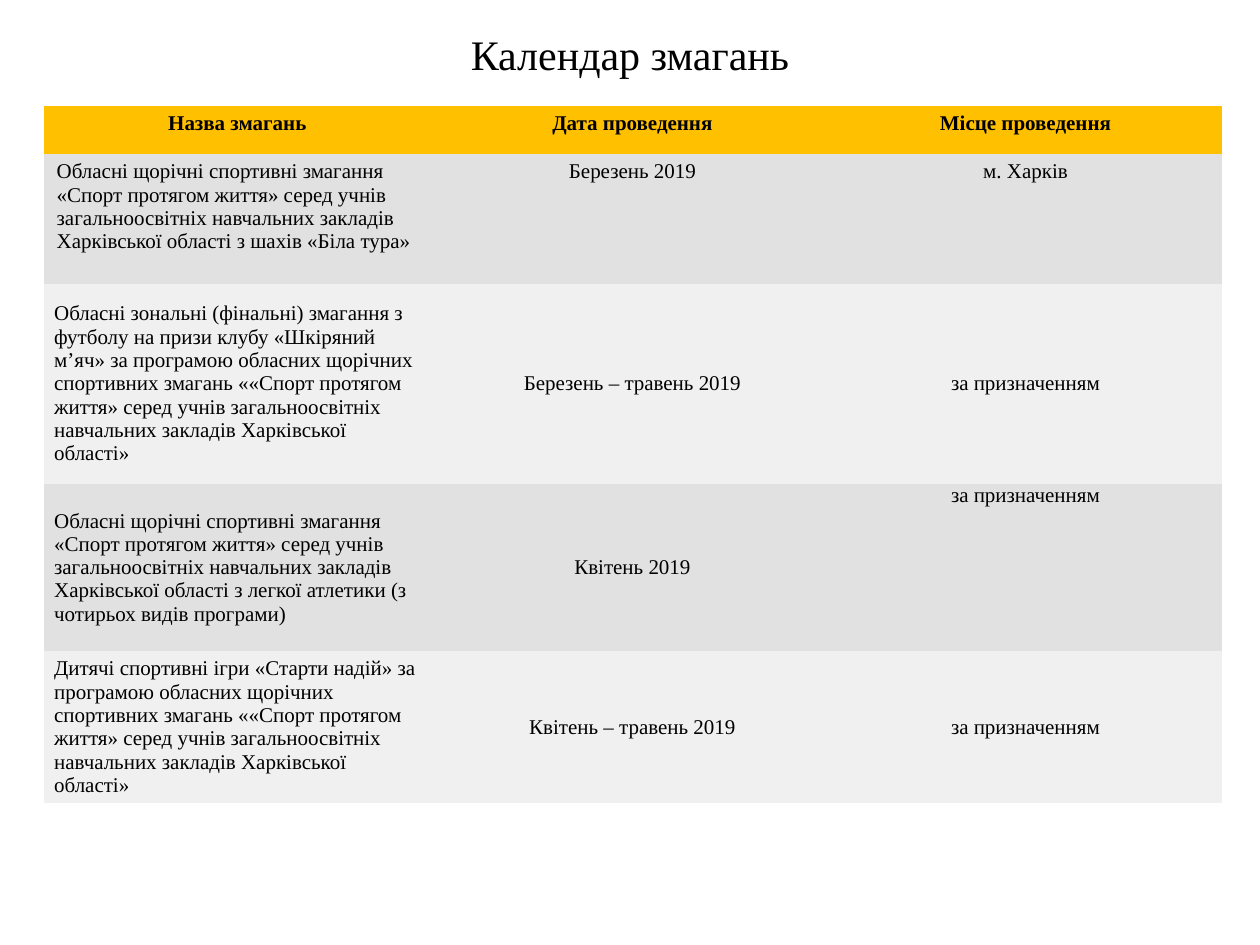
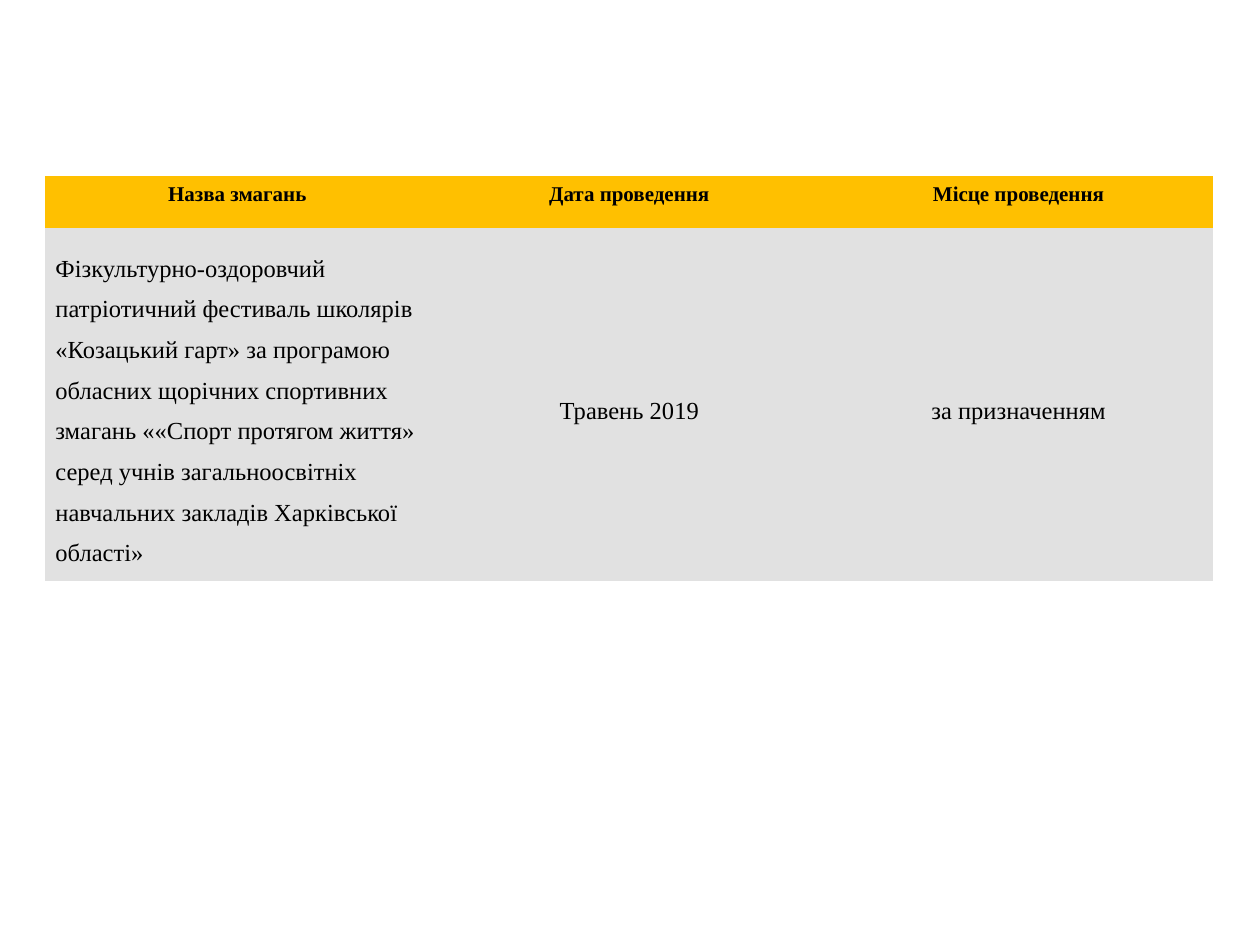
import pptx
import pptx.dml.color
import pptx.enum.text
import pptx.util

Inches = pptx.util.Inches
Pt = pptx.util.Pt
RGBColor = pptx.dml.color.RGBColor
ALIGN = pptx.enum.text.PP_ALIGN
ANCHOR = pptx.enum.text.MSO_ANCHOR

FONT = "Times New Roman"
BLACK = RGBColor(0x00, 0x00, 0x00)
GOLD = RGBColor(0xFF, 0xC0, 0x00)
GREY = RGBColor(0xE1, 0xE1, 0xE1)
LIGHT = RGBColor(0xF0, 0xF0, 0xF0)
PLAIN_STYLE = "{2D5ABB26-0587-4C30-8999-92F81FD0307C}"

HEADER = ("Назва змагань ", "Дата проведення", "Місце проведення")
SPRING_EVENTS = [
    ("Обласні щорічні спортивні змагання «Спорт протягом життя» серед учнів "
     "загальноосвітніх навчальних закладів Харківської області з шахів «Біла тура»",
     "Березень 2019", "м. Харків"),
    ("Обласні зональні (фінальні) змагання з футболу на призи клубу «Шкіряний м’яч» "
     "за програмою обласних щорічних спортивних змагань ««Спорт протягом життя» "
     "серед учнів загальноосвітніх навчальних закладів Харківської області»",
     "Березень – травень 2019", "за призначенням"),
    ("Обласні щорічні спортивні змагання «Спорт протягом життя» серед учнів "
     "загальноосвітніх навчальних закладів Харківської області з легкої атлетики "
     "(з чотирьох видів програми)",
     "Квітень 2019", "за призначенням"),
    ("Дитячі спортивні ігри «Старти надій» за програмою обласних щорічних спортивних "
     "змагань ««Спорт протягом життя» серед учнів загальноосвітніх навчальних "
     "закладів Харківської області»",
     "Квітень – травень 2019", "за призначенням"),
]
MAY_EVENTS = [
    ("Фізкультурно-оздоровчий патріотичний фестиваль школярів «Козацький гарт» "
     "за програмою обласних щорічних спортивних змагань ««Спорт протягом життя» "
     "серед учнів загальноосвітніх навчальних закладів Харківської області»",
     "Травень 2019", "за призначенням"),
]


def format_text(p, size, align, bold=False, spacing=None):
    p.alignment = align
    p.line_spacing = spacing
    for r in p.runs:
        r.font.name = FONT
        r.font.size = Pt(size)
        r.font.bold = bold
        r.font.color.rgb = BLACK


def add_calendar(slide, left, top, widths, heights, events, size, spacing, top_rows):
    """Add an events table; top_rows keep the default margins and top anchor."""
    rows = [HEADER] + events
    frame = slide.shapes.add_table(len(rows), len(HEADER), Inches(left), Inches(top),
                                   Inches(sum(widths)), Inches(sum(heights)))
    table = frame.table
    table._tbl.tblPr.find(pptx.oxml.ns.qn("a:tableStyleId")).text = PLAIN_STYLE
    for column, width in zip(table.columns, widths):
        column.width = Inches(width)
    for i, (texts, height) in enumerate(zip(rows, heights)):
        table.rows[i].height = Inches(height)
        header = i == 0
        for j, text in enumerate(texts):
            cell = table.cell(i, j)
            cell.text = text
            cell.fill.solid()
            cell.fill.fore_color.rgb = GOLD if header else (GREY if i % 2 else LIGHT)
            if i >= top_rows:
                cell.vertical_anchor = ANCHOR.MIDDLE
                cell.margin_left = cell.margin_right = Inches(0.08)
                cell.margin_top = cell.margin_bottom = 0
            format_text(cell.text_frame.paragraphs[0], 12 if header else size,
                        ALIGN.CENTER if header or j else ALIGN.LEFT,
                        header, None if header else spacing)
    return frame


prs = pptx.Presentation()
prs.slide_width = Inches(10)
prs.slide_height = Inches(7.5)
blank = prs.slide_layouts[6]

# Slide 1: title and spring calendar
s = prs.slides.add_slide(blank)
title = s.shapes.add_textbox(Inches(0.69), Inches(0.17), Inches(8.62), Inches(0.57))
tf = title.text_frame
tf.word_wrap = True
tf.vertical_anchor = ANCHOR.MIDDLE
tf.text = "Календар змагань"
format_text(tf.paragraphs[0], 24, ALIGN.CENTER, spacing=0.9)
calendar = add_calendar(s, 0.35, 0.84, (3.11, 3.12, 3.12), (0.38, 1.03, 1.59, 1.33, 1.14),
                        SPRING_EVENTS, 12, None, 2)
calendar.table.cell(3, 2).vertical_anchor = ANCHOR.TOP

# Slide 2: calendar continued, its event row grows to fit the text
s = prs.slides.add_slide(blank)
calendar = add_calendar(s, 0.36, 1.4, (3.09, 3.09, 3.09), (0.41, 0.41),
                        MAY_EVENTS, 14, 1.5, 1)
calendar.height = Inches(3.21)

prs.save("out.pptx")
